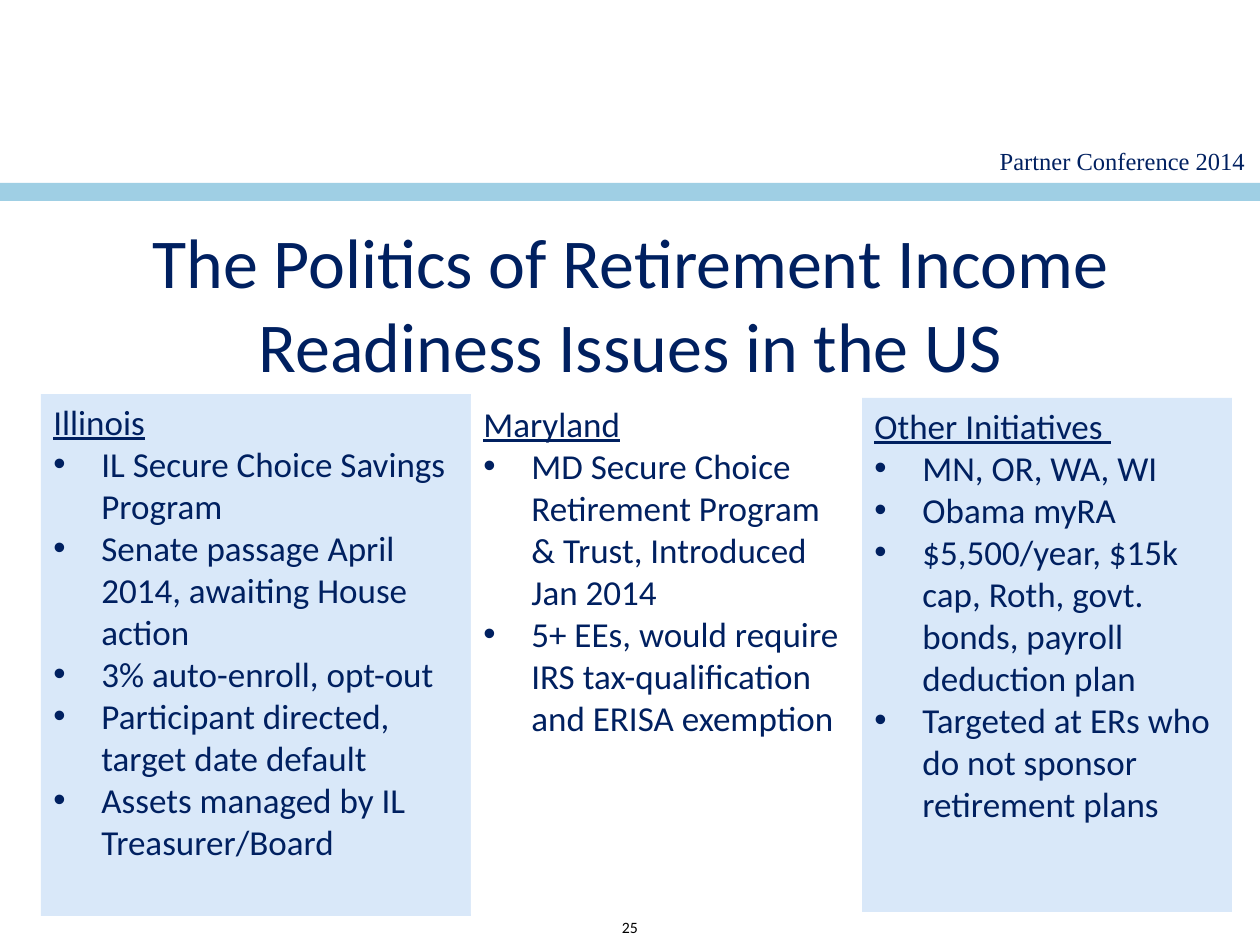
from dataclasses import dataclass

from lxml.etree import SubElement
from pptx import Presentation
from pptx.dml.color import RGBColor
from pptx.enum.shapes import MSO_SHAPE
from pptx.enum.text import MSO_ANCHOR, PP_ALIGN
from pptx.oxml.ns import qn
from pptx.util import Pt

EMU_PER_PX = 914400 / 126


def px(n: int) -> int:
    return round(n * EMU_PER_PX)


@dataclass(frozen=True)
class Theme:
    navy: str = "002060"
    black: str = "000000"
    white: str = "FFFFFF"
    band: str = "9FCFE4"
    panel: str = "D9E8F9"
    sans: str = "Calibri"
    serif: str = "Times New Roman"
    title: int = 40
    body: int = 20
    header: int = 14
    footer: int = 9


@dataclass(frozen=True)
class Box:
    x: int
    y: int
    w: int
    h: int


@dataclass(frozen=True)
class Column:
    box: Box
    fill: str
    heading: str
    bullets: tuple[str, ...]


T = Theme()
INDENT = 48

COLUMNS = (
    Column(Box(41, 394, 430, 522), T.panel, "Illinois", (
        "IL Secure Choice Savings Program",
        "Senate passage April 2014, awaiting House action",
        "3% auto-enroll, opt-out",
        "Participant directed, target date default",
        "Assets managed by IL Treasurer/Board",
    )),
    Column(Box(471, 396, 391, 518), T.white, "Maryland", (
        "MD Secure Choice Retirement Program & Trust, Introduced Jan 2014",
        "5+ EEs, would require IRS tax-qualification and ERISA exemption",
    )),
    Column(Box(862, 398, 370, 514), T.panel, "Other Initiatives ", (
        "MN, OR, WA, WI",
        "Obama myRA",
        "$5,500/year, $15k cap, Roth, govt. bonds, payroll deduction plan",
        "Targeted at ERs who do not sponsor retirement plans",
    )),
)


def add_bullet(p) -> None:
    pPr = p._p.get_or_add_pPr()
    pPr.set("marL", str(px(INDENT)))
    pPr.set("indent", str(-px(INDENT)))
    SubElement(pPr, qn("a:buFont"), typeface="Arial")
    SubElement(pPr, qn("a:buChar"), char="•")


def write(p, text: str, *, size: int = T.body, font: str = T.sans,
          color: str = T.navy, align=PP_ALIGN.LEFT,
          underline: bool = False, bullet: bool = False) -> None:
    """Put one formatted run of text in a paragraph."""
    p.alignment = align
    if bullet:
        add_bullet(p)
    r = p.add_run()
    r.text = text
    r.font.size = Pt(size)
    r.font.name = font
    r.font.color.rgb = RGBColor.from_string(color)
    r.font.underline = underline


def add_rect(s, box: Box, fill: str):
    sp = s.shapes.add_shape(MSO_SHAPE.RECTANGLE, px(box.x), px(box.y),
                            px(box.w), px(box.h))
    sp.shadow.inherit = False
    sp.fill.solid()
    sp.fill.fore_color.rgb = RGBColor.from_string(fill)
    sp.line.fill.background()
    return sp


def add_label(s, box: Box, text: str, *, anchor=MSO_ANCHOR.TOP, **fmt) -> None:
    sp = s.shapes.add_textbox(px(box.x), px(box.y), px(box.w), px(box.h))
    tf = sp.text_frame
    tf.word_wrap = True
    tf.vertical_anchor = anchor
    write(tf.paragraphs[0], text, align=PP_ALIGN.CENTER, **fmt)


def add_column(s, col: Column) -> None:
    tf = add_rect(s, col.box, col.fill).text_frame
    tf.word_wrap = True
    tf.vertical_anchor = MSO_ANCHOR.TOP
    write(tf.paragraphs[0], col.heading, underline=True)
    for text in col.bullets:
        write(tf.add_paragraph(), text, bullet=True)


def main() -> None:
    prs = Presentation()
    prs.slide_width, prs.slide_height = px(1260), px(945)
    s = prs.slides.add_slide(prs.slide_layouts[6])

    # Header, band and page number
    add_label(s, Box(985, 140, 275, 43), "Partner Conference 2014",
              size=T.header, font=T.serif)
    add_rect(s, Box(0, 183, 1260, 18), T.band)
    add_label(s, Box(0, 912, 1260, 32), "25", size=T.footer, color=T.black)

    # Title
    add_label(s, Box(76, 233, 1109, 160),
              "The Politics of Retirement Income Readiness Issues in the US",
              size=T.title, anchor=MSO_ANCHOR.BOTTOM)

    # State columns
    for col in COLUMNS:
        add_column(s, col)

    prs.save("out.pptx")


if __name__ == "__main__":
    main()
